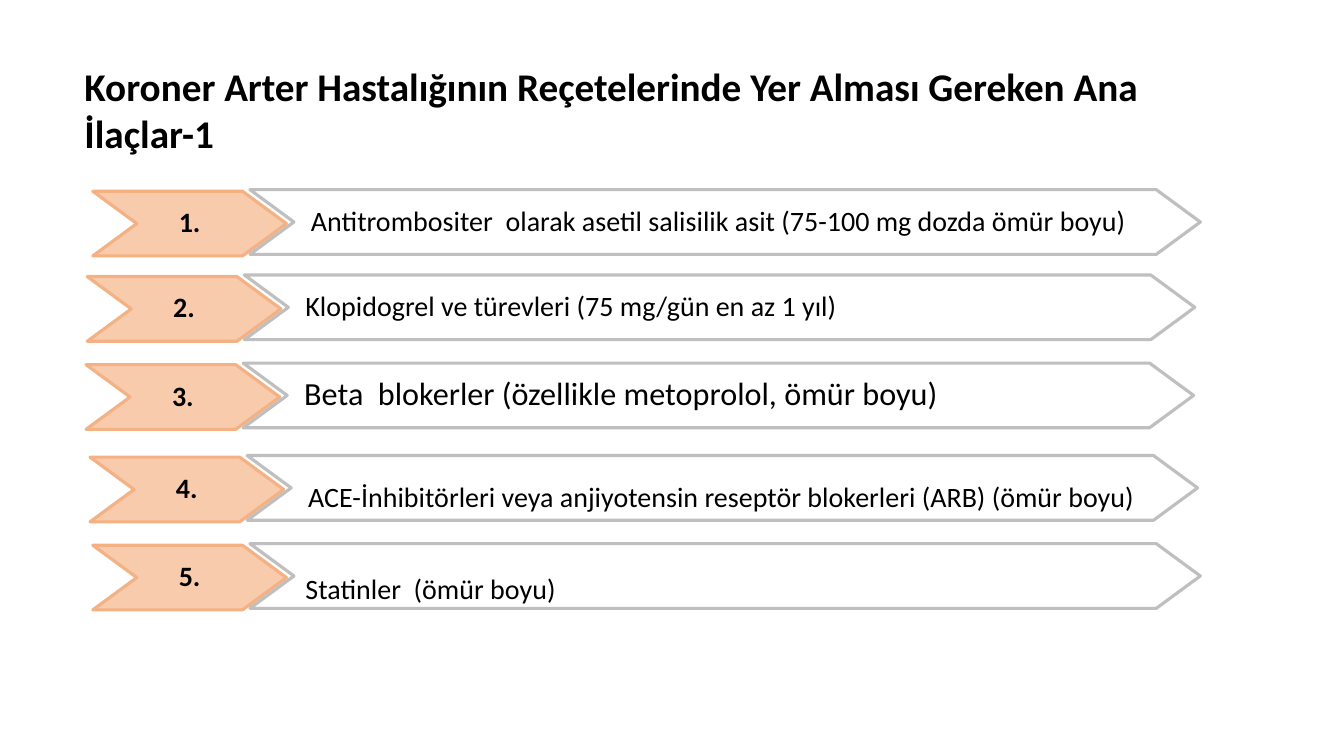
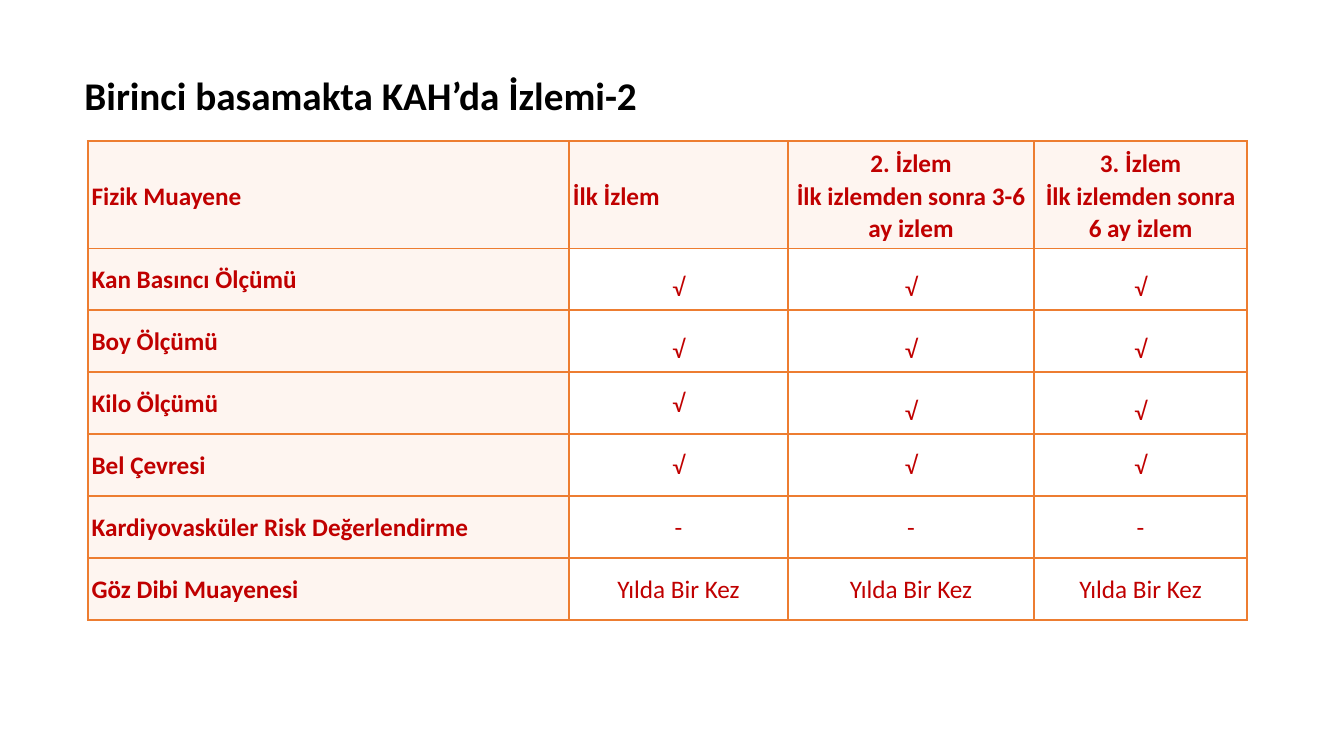
from lxml import etree
from pptx import Presentation
from pptx.dml.color import RGBColor
from pptx.enum import shapes, text
from pptx.oxml import ns
from pptx.util import Cm, Pt

BLACK = RGBColor(0x00, 0x00, 0x00)
WHITE = RGBColor(0xFF, 0xFF, 0xFF)
PEACH = RGBColor(0xF8, 0xCB, 0xAD)
PEACH_LINE = RGBColor(0xF4, 0xB1, 0x83)
GREY_LINE = RGBColor(0xBF, 0xBF, 0xBF)
ORANGE = RGBColor(0xED, 0x7D, 0x31)
RED = RGBColor(0xC0, 0x00, 0x00)
TINT = RGBColor(0xFE, 0xF5, 0xF0)
LEFT, CENTER = text.PP_ALIGN.LEFT, text.PP_ALIGN.CENTER
TOP, MIDDLE = text.MSO_ANCHOR.TOP, text.MSO_ANCHOR.MIDDLE


def set_text(tf, words, size, color, bold=False, align=LEFT, spacing=1.0):
    tf.text = words
    tf.word_wrap = True
    for p in tf.paragraphs:
        p.alignment = align
        p.line_spacing = spacing
        for r in p.runs:
            r.font.name = "Calibri"
            r.font.size = Pt(size)
            r.font.bold = bold
            r.font.color.rgb = color


def add_chevron(s, x, y, width, fill, line):
    sp = s.shapes.add_shape(shapes.MSO_SHAPE.CHEVRON, Cm(x), Cm(y), Cm(width), Cm(1.63))
    sp.adjustments[0] = 0.68
    sp.shadow.inherit = False
    sp.fill.solid()
    sp.fill.fore_color.rgb = fill
    sp.line.color.rgb = line
    sp.line.width = Pt(2.25)
    tf = sp.text_frame
    tf.vertical_anchor = MIDDLE
    tf.margin_left = tf.margin_right = tf.margin_top = tf.margin_bottom = Cm(0.03)
    return sp


prs = Presentation()
prs.slide_width, prs.slide_height = Cm(33.87), Cm(19.05)

# Slides with their titles: text, top, width, height
titles = [
    ("Koroner Arter Hastalığının Reçetelerinde Yer Alması Gereken Ana İlaçlar-1", 1.45, 28.37, 2.65),
    ("Birinci basamakta KAH’da İzlemi-2", 1.68, 25.4, 1.45),
]
for words, top, width, height in titles:
    s = prs.slides.add_slide(prs.slide_layouts[6])
    tf = s.shapes.add_textbox(Cm(1.88), Cm(top), Cm(width), Cm(height)).text_frame
    set_text(tf, words, 28, BLACK, bold=True)
    tf.auto_size = text.MSO_AUTO_SIZE.SHAPE_TO_FIT_TEXT
drug_slide, follow_up_slide = prs.slides

# Numbered drugs: left, top, text, size, line spacing, text indent
drugs = [
    (2.34, 4.82, "Antitrombositer  olarak asetil salisilik asit (75-100 mg dozda ömür boyu)", 20, 0.9, 0.43),
    (2.2, 6.97, "Klopidogrel ve türevleri (75 mg/gün en az 1 yıl)", 20, 0.9, 0.43),
    (2.17, 9.19, "Beta  blokerler (özellikle metoprolol, ömür boyu)", 23, 0.9, 0.43),
    (2.27, 11.52, "ACE-İnhibitörleri veya anjiyotensin reseptör blokerleri (ARB) (ömür boyu)", 20, 1.5, 0.43),
    (2.34, 13.74, "Statinler  (ömür boyu)", 20, 1.72, 0.29),
]
for number, (x, y, words, size, spacing, indent) in enumerate(drugs, 1):
    sp = add_chevron(drug_slide, x, y, 4.88, PEACH, PEACH_LINE)
    set_text(sp.text_frame, f"{number}.", 20, BLACK, True, CENTER, 0.9)

    sp = add_chevron(drug_slide, x + 3.96, y - 0.04, 23.95, WHITE, GREY_LINE)
    color = sp.fill._xPr.find(ns.qn("a:solidFill"))[0]
    etree.SubElement(color, ns.qn("a:alpha"), val="90000")
    set_text(sp.text_frame, words, size, BLACK, spacing=spacing)
    sp.text_frame.margin_left = Cm(indent)

# Follow-up table
rows = [
    ["Fizik Muayene", "İlk İzlem", "2. İzlem\nİlk izlemden sonra 3-6 ay izlem",
     "3. İzlem\nİlk izlemden sonra 6 ay izlem"],
    ["Kan Basıncı Ölçümü"] + ["√"] * 3,
    ["Boy Ölçümü"] + ["√"] * 3,
    ["Kilo Ölçümü"] + ["√"] * 3,
    ["Bel Çevresi"] + ["√"] * 3,
    ["Kardiyovasküler Risk Değerlendirme"] + ["-"] * 3,
    ["Göz Dibi Muayenesi"] + ["Yılda Bir Kez"] * 3,
]
widths = [12.13, 5.52, 6.2, 5.37]
heights = [2.7] + [1.56] * 6
table = follow_up_slide.shapes.add_table(
    len(rows), len(widths), Cm(2.21), Cm(3.56), Cm(sum(widths)), Cm(sum(heights))).table
table.first_row = table.horz_banding = False
for column, width in zip(table.columns, widths):
    column.width = Cm(width)
for row, height in zip(table.rows, heights):
    row.height = Cm(height)

for i, row in enumerate(rows):
    for j, words in enumerate(row):
        cell = table.cell(i, j)
        heading = i == 0 or j == 0
        centered = j > 1 or (i > 0 and j > 0)
        set_text(cell.text_frame, words, 18, RED, heading,
                 CENTER if centered else LEFT, 1.5 if i else 1.06)
        middle = i == 0 or (i < 4 and j > 0 and (i, j) != (3, 1))
        cell.vertical_anchor = MIDDLE if middle else TOP
        cell.margin_left = cell.margin_right = Cm(0.1)
        cell.margin_top, cell.margin_bottom = Cm(0.03), 0

        # Cell borders
        tcPr = cell._tc.get_or_add_tcPr()
        for side in ("lnL", "lnR", "lnT", "lnB"):
            ln = etree.SubElement(tcPr, ns.qn(f"a:{side}"), w=str(Pt(1.5)))
            fill = etree.SubElement(ln, ns.qn("a:solidFill"))
            etree.SubElement(fill, ns.qn("a:srgbClr"), val=str(ORANGE))

        if heading:
            cell.fill.solid()
            cell.fill.fore_color.rgb = TINT
        else:
            cell.fill.background()

prs.save("out.pptx")
